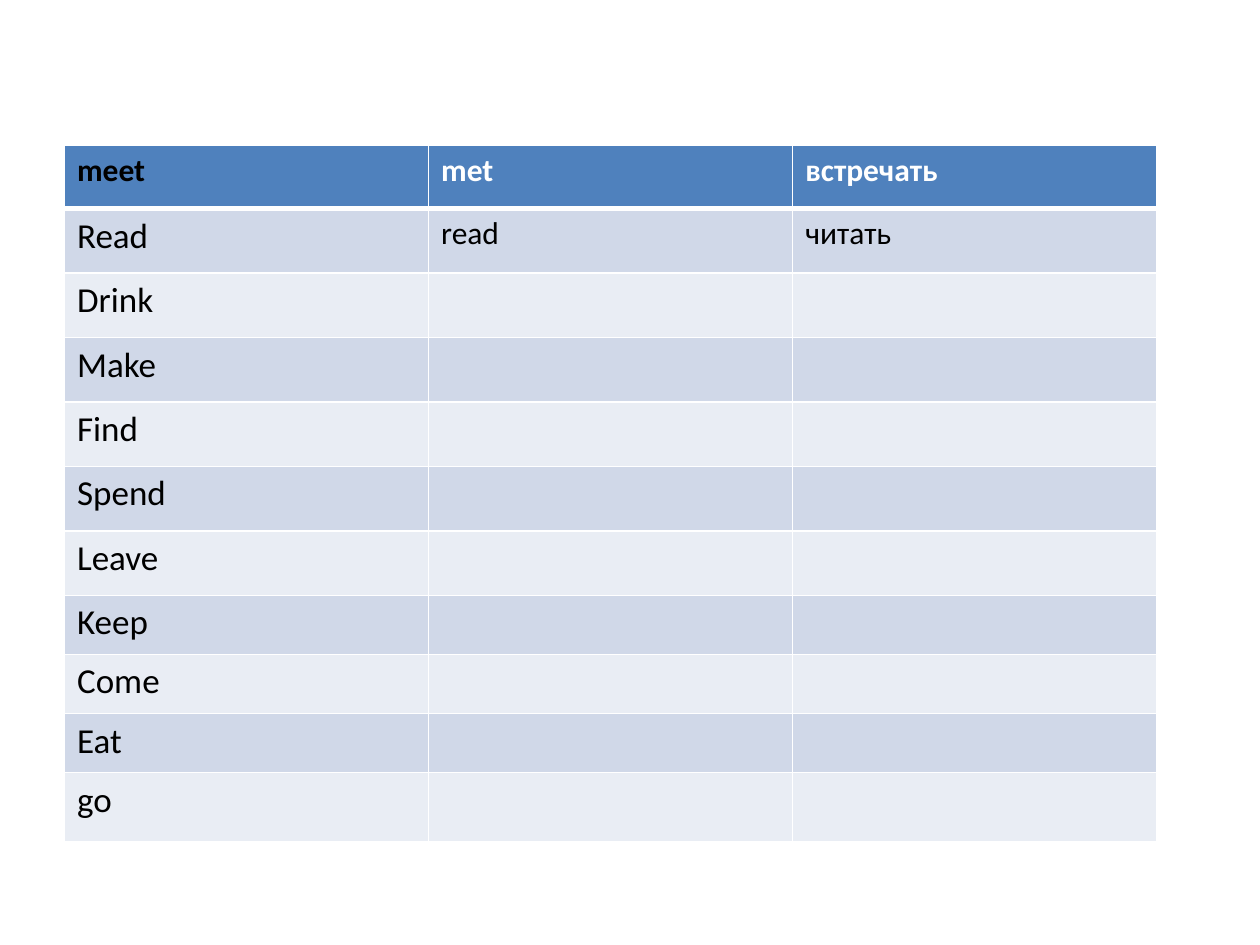
from lxml.etree import SubElement as Sub
from pptx import Presentation
from pptx.dml.color import RGBColor as RGB
from pptx.oxml.ns import qn
from pptx.util import Cm, Pt

COLORS = {"header": "4F81BD", "odd": "D0D8E8", "even": "E9EDF4",
          "white": "FFFFFF", "black": "000000"}
VERBS = ["Read", "Drink", "Make", "Find", "Spend", "Leave", "Keep", "Come", "Eat", "go"]
ROWS = [("meet", "met", "встречать"), ("Read", "read", "читать")]
ROWS += [(verb, "", "") for verb in VERBS[1:]]
HEIGHTS = [1.27] + [1.3] * 6 + [1.19] * 3 + [1.39]


class Deck:
    font = "Calibri"

    def __init__(self, prs):
        self.s = prs.slides.add_slide(prs.slide_layouts[6])

    def border(self, cell, side, width):
        ln = Sub(cell._tc.get_or_add_tcPr(), qn(f"a:ln{side}"), w=str(Pt(width)))
        Sub(Sub(ln, qn("a:solidFill")), qn("a:srgbClr"), val=COLORS["white"])

    def cell(self, cell, text, size, color, fill, bold, widths):
        for side, width in zip("LRTB", widths):
            self.border(cell, side, width)
        cell.fill.solid()
        cell.fill.fore_color.rgb = RGB.from_string(COLORS[fill])
        if text:
            r = cell.text_frame.paragraphs[0].add_run()
            r.text = text
            r.font.name, r.font.size, r.font.bold = self.font, Pt(size), bold
            r.font.color.rgb = RGB.from_string(COLORS[color])

    def table(self, x, y, col_width, heights, rows):
        cols = len(rows[0])
        table = self.s.shapes.add_table(len(rows), cols, Cm(x), Cm(y),
                                        Cm(col_width * cols), Cm(sum(heights))).table
        for col in table.columns:
            col.width = Cm(col_width)
        for i, (height, texts) in enumerate(zip(heights, rows)):
            table.rows[i].height = Cm(height)
            head = i == 0
            fill = "header" if head else "odd" if i % 2 else "even"
            widths = (1, 1, 3 if i == 1 else 1, 3 if head else 1)
            for j, text in enumerate(texts):
                size = 20 if j == 0 and not head else 18
                color = "white" if head and j else "black"
                self.cell(table.cell(i, j), text, size, color, fill, head, widths)


def main():
    prs = Presentation()
    prs.slide_width, prs.slide_height = Cm(25.4), Cm(19.05)
    Deck(prs).table(1.3, 2.93, 7.34, HEIGHTS, ROWS)
    prs.save("out.pptx")


if __name__ == "__main__":
    main()
